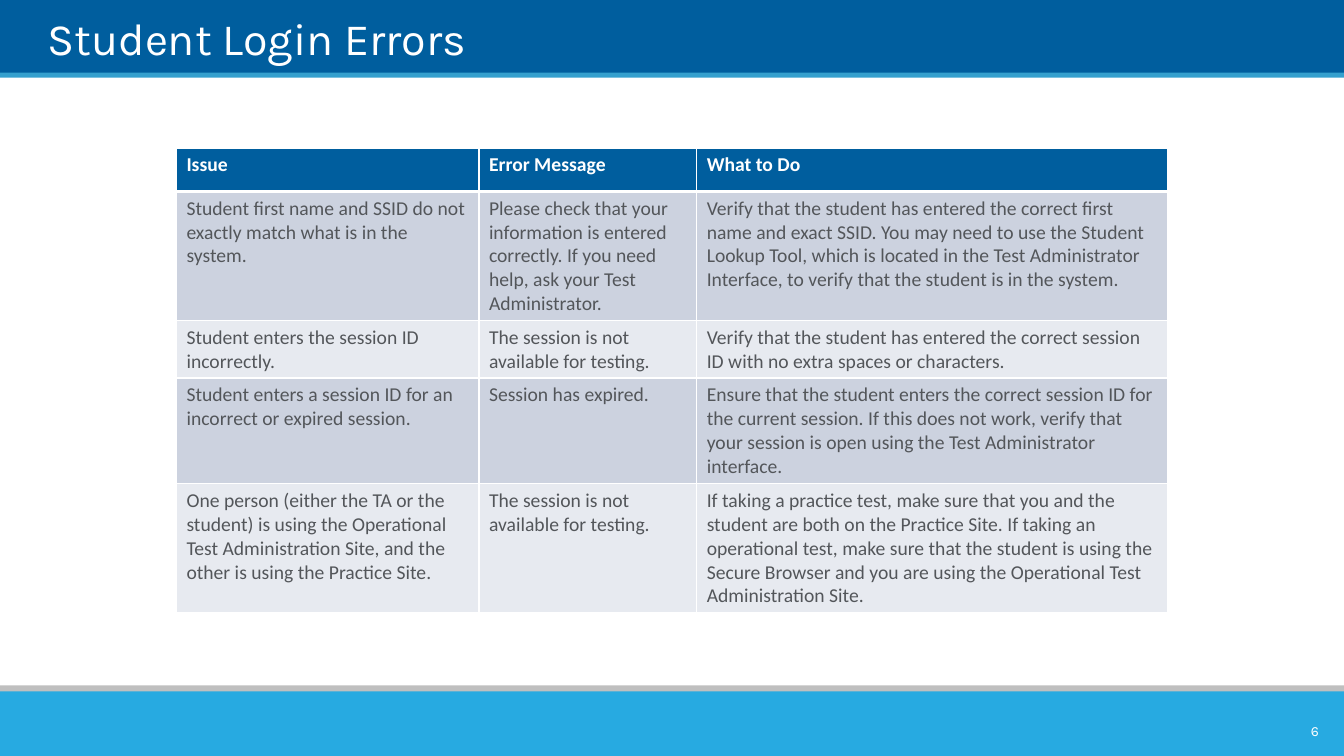
from lxml.etree import SubElement
from pptx import Presentation
from pptx.dml.color import RGBColor
from pptx.enum.shapes import MSO_SHAPE as Shape
from pptx.enum.text import MSO_ANCHOR as Anchor, PP_ALIGN as Align
from pptx.oxml.ns import qn
from pptx.util import Inches, Pt

WHITE = RGBColor(0xFF, 0xFF, 0xFF)
NAVY = RGBColor(0x00, 0x5E, 0x9E)
BLUE = RGBColor(0x35, 0xA0, 0xCE)
SKY = RGBColor(0x27, 0xAA, 0xE1)
SILVER = RGBColor(0xBF, 0xBF, 0xBF)
SLATE = RGBColor(0x53, 0x56, 0x5A)
DARK_ROW = RGBColor(0xCC, 0xD2, 0xDF)
LIGHT_ROW = RGBColor(0xE7, 0xEA, 0xF0)

SLIDE_WIDTH = 13.33
COLUMN_WIDTHS = [3, 2.16, 4.67]
ROW_HEIGHTS = [0.43, 1.28, 0.57, 1.05, 1.28]
BANDS = [
    (-0.01, 0.75, NAVY),
    (0.72, 0.05, BLUE),
    (6.8, 0.14, SILVER),
    (6.86, 0.64, SKY),
]
LOGIN_ERRORS = [
    ("Issue", "Error Message", "What to Do"),
    (
        "Student first name and SSID do not exactly match what is in the system.",
        "Please check that your information is entered correctly. If you need help, "
        "ask your Test Administrator.",
        "Verify that the student has entered the correct first name and exact SSID. "
        "You may need to use the Student Lookup Tool, which is located in the Test "
        "Administrator Interface, to verify that the student is in the system.",
    ),
    (
        "Student enters the session ID incorrectly.",
        "The session is not available for testing.",
        "Verify that the student has entered the correct session ID with no extra "
        "spaces or characters.",
    ),
    (
        "Student enters a session ID for an incorrect or expired session.",
        "Session has expired.",
        "Ensure that the student enters the correct session ID for the current "
        "session. If this does not work, verify that your session is open using the "
        "Test Administrator interface.",
    ),
    (
        "One person (either the TA or the student) is using the Operational Test "
        "Administration Site, and the other is using the Practice Site.",
        "The session is not available for testing.",
        "If taking a practice test, make sure that you and the student are both on "
        "the Practice Site. If taking an operational test, make sure that the student "
        "is using the Secure Browser and you are using the Operational Test "
        "Administration Site.",
    ),
]


class SlideBuilder:
    heading_font = "Karla"
    table_font = "Calibri"

    def __init__(self, slide):
        self.slide = slide

    def style_text(self, text_frame, font_name, size, color, bold=False):
        for paragraph in text_frame.paragraphs:
            for run in paragraph.runs:
                run.font.name = font_name
                run.font.size = Pt(size)
                run.font.color.rgb = color
                run.font.bold = bold

    def band(self, top, height, color):
        shape = self.slide.shapes.add_shape(
            Shape.RECTANGLE, 0, Inches(top), Inches(SLIDE_WIDTH), Inches(height)
        )
        shape.shadow.inherit = False
        shape.fill.solid()
        shape.fill.fore_color.rgb = color
        shape.line.fill.background()

    def text(self, text, left, top, width, height, size, anchor, align):
        box = self.slide.shapes.add_textbox(
            Inches(left), Inches(top), Inches(width), Inches(height)
        )
        text_frame = box.text_frame
        text_frame.word_wrap = True
        text_frame.vertical_anchor = anchor
        text_frame.text = text
        text_frame.paragraphs[0].alignment = align
        self.style_text(text_frame, self.heading_font, size, WHITE)
        return text_frame

    def border(self, cell, side, width):
        properties = cell._tc.get_or_add_tcPr()
        line = SubElement(properties, qn(f"a:ln{side}"), w=str(Pt(width)))
        fill = SubElement(line, qn("a:solidFill"))
        SubElement(fill, qn("a:srgbClr"), val=str(WHITE))

    def table(self, rows, left, top, widths, heights):
        table = self.slide.shapes.add_table(
            len(rows), len(widths), Inches(left), Inches(top),
            Inches(sum(widths)), Inches(sum(heights)),
        ).table
        for column, width in zip(table.columns, widths):
            column.width = Inches(width)
        for row, height in zip(table.rows, heights):
            row.height = Inches(height)
        for row_index, row in enumerate(rows):
            header = row_index == 0
            fill = NAVY if header else DARK_ROW if row_index % 2 else LIGHT_ROW
            sides = {
                "L": 1, "R": 1,
                "T": 3 if row_index == 1 else 1,
                "B": 3 if header else 1,
            }
            for column_index, text in enumerate(row):
                cell = table.cell(row_index, column_index)
                for side, width in sides.items():
                    self.border(cell, side, width)
                cell.fill.solid()
                cell.fill.fore_color.rgb = fill
                cell.text_frame.text = text
                self.style_text(
                    cell.text_frame, self.table_font, 14,
                    WHITE if header else SLATE, header,
                )


def main():
    presentation = Presentation()
    presentation.slide_width = Inches(SLIDE_WIDTH)
    presentation.slide_height = Inches(7.5)
    builder = SlideBuilder(presentation.slides.add_slide(presentation.slide_layouts[6]))
    for top, height, color in BANDS:
        builder.band(top, height, color)
    title = builder.text(
        "Student Login Errors", 0.47, 0.07, 12.05, 0.57, 32, Anchor.BOTTOM, Align.LEFT
    )
    title.margin_left = title.margin_top = title.margin_right = title.margin_bottom = 0
    builder.table(LOGIN_ERRORS, 1.75, 1.47, COLUMN_WIDTHS, ROW_HEIGHTS)
    builder.text("6", 12.78, 7.11, 0.4, 0.29, 10, Anchor.MIDDLE, Align.RIGHT)
    presentation.save("out.pptx")


if __name__ == "__main__":
    main()
